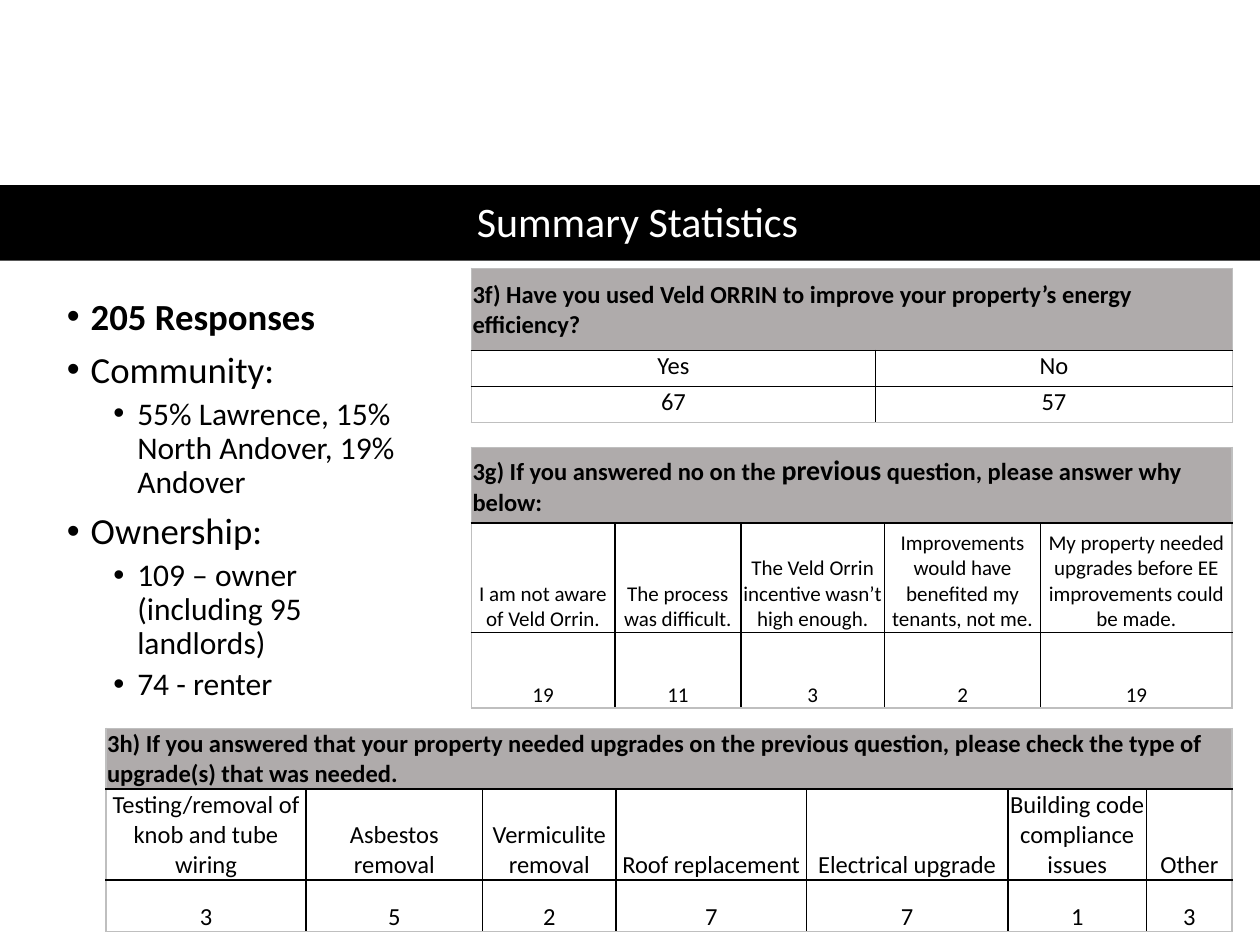
from lxml import etree
from pptx import Presentation
from pptx import util as u
from pptx.dml.color import RGBColor
from pptx.enum import shapes, text
from pptx.oxml.ns import qn

FONT = "Calibri"
BLACK, WHITE, GREY, EDGE = "000000", "FFFFFF", "AFABAB", "BFBFBF"
LEFT, MID, RIGHT = text.PP_ALIGN.LEFT, text.PP_ALIGN.CENTER, 9.78
TOP, BASE = text.MSO_ANCHOR.MIDDLE, text.MSO_ANCHOR.BOTTOM

POINTS = [
    (0, "205 Responses", True),
    (0, "Community:", False),
    (1, "55% Lawrence, 15% North Andover, 19% Andover", False),
    (0, "Ownership:", False),
    (1, "109 – owner (including 95 landlords)", False),
    (1, "74 - renter", False),
]
USED = [("Yes", "67"), ("No", "57")]
WHY = [
    ("I am not aware of Veld Orrin.", "19"),
    ("The process was difficult.", "11"),
    ("The Veld Orrin incentive wasn’t high enough.", "3"),
    ("Improvements would have benefited my tenants, not me.", "2"),
    ("My property needed upgrades before EE improvements could be made.", "19"),
]
NEEDS = [
    ("Testing/removal of knob and tube wiring", "3"),
    ("Asbestos removal", "5"),
    ("Vermiculite removal", "2"),
    ("Roof replacement", "7"),
    ("Electrical upgrade", "7"),
    ("Building code compliance issues", "1"),
    ("Other", "3"),
]


def tint(code):
    return RGBColor.from_string(code)


def style(run, size, color=BLACK, bold=False):
    font = run.font
    font.name, font.size, font.bold = FONT, u.Pt(size), bold
    font.color.rgb = tint(color)


def place(shape, x, y, w, h):
    shape.left, shape.top = u.Inches(x), u.Inches(y)
    shape.width, shape.height = u.Inches(w), u.Inches(h)


def inset(item, sides):
    """Set left, top, right and bottom margins in inches."""
    names = ("margin_left", "margin_top", "margin_right", "margin_bottom")
    for name, side in zip(names, sides):
        setattr(item, name, u.Inches(side))


def add_band(slide):
    band = slide.shapes.add_shape(
        shapes.MSO_SHAPE.RECTANGLE, 0, u.Inches(1.47), u.Inches(10), u.Inches(0.6))
    band.shadow.inherit = False
    band.fill.solid()
    band.fill.fore_color.rgb = tint(BLACK)
    band.line.fill.background()
    slide.shapes._spTree.insert(2, band._element)  # behind the title


def set_title(slide, words):
    title = slide.shapes.title
    place(title, 0.46, 1.47, 9.2, 0.61)
    frame = title.text_frame
    frame.text = words
    frame.auto_size = text.MSO_AUTO_SIZE.NONE
    frame.vertical_anchor = TOP
    inset(frame, (0.07, 0.04, 0.07, 0.04))
    para = frame.paragraphs[0]
    para.alignment, para.line_spacing = MID, 0.9
    style(para.runs[0], 24, WHITE)


def set_list(slide, points):
    body = slide.placeholders[1]
    place(body, 0.46, 2.33, 8.39, 4.96)
    frame = body.text_frame
    frame.text = "\n".join(words for _, words, _ in points)
    frame.auto_size = text.MSO_AUTO_SIZE.NONE
    inset(frame, (0.07, 0.04, 0.07, 0.04))
    frame._txBody.bodyPr.set("numCol", "3")
    for para, (level, _, bold) in zip(frame.paragraphs, points):
        para.level, para.line_spacing = level, 0.9
        para.space_before = u.Pt((7.5, 3.8)[level])
        props = para._p.get_or_add_pPr()
        props.set("marL", str(u.Inches((0.19, 0.56)[level])))
        props.set("indent", str(u.Inches(-0.19)))
        etree.SubElement(props, qn("a:buFont")).set("typeface", "Arial")
        etree.SubElement(props, qn("a:buChar")).set("char", "•")
        style(para.runs[0], (21, 18)[level], bold=bold)


def rule(cell, side, color):
    """Draw one border of a cell."""
    line = etree.SubElement(cell._tc.get_or_add_tcPr(), qn("a:ln" + side))
    line.set("w", str(u.Pt(1)))
    fill = etree.SubElement(line, qn("a:solidFill"))
    etree.SubElement(fill, qn("a:srgbClr")).set("val", color)


def border(grid, row, col):
    cell = grid.cell(row, col)
    last_row, last_col = len(grid.rows) - 1, len(grid.columns) - 1
    outer = {"L": col == 0, "R": col == last_col or cell.is_merge_origin,
             "T": row == 0, "B": row == last_row}
    for side, edge in outer.items():
        rule(cell, side, EDGE if edge else BLACK)


def fill_cell(cell, parts, align, anchor, low, bold=False):
    """Write (words, size) parts into a cell; low is its bottom margin."""
    para = cell.text_frame.paragraphs[0]
    para.alignment = align
    for words, size in parts:
        run = para.add_run()
        run.text = words
        style(run, size, bold=bold)
    cell.vertical_anchor = anchor
    inset(cell, (0.01, 0.01, 0.01, low))


def add_grid(slide, y, widths, heights, head, pairs, size=14, low=0):
    """Table with a full-width question above answers and their counts."""
    wide = sum(widths)
    frame = slide.shapes.add_table(
        len(heights), len(widths), u.Inches(RIGHT - wide), u.Inches(y),
        u.Inches(wide), u.Inches(sum(heights)))
    grid = frame.table
    grid.horz_banding = False
    for col, width in zip(grid.columns, widths):
        col.width = u.Inches(width)
    for row, height in zip(grid.rows, heights):
        row.height = u.Inches(height)
    grid.cell(0, 0).merge(grid.cell(0, len(widths) - 1))
    for r in range(len(heights)):
        for c in range(len(widths)):
            border(grid, r, c)
            cell = grid.cell(r, c)
            if r:
                cell.fill.background()
                fill_cell(cell, [(pairs[c][r - 1], size)], MID, BASE, low)
            else:
                cell.fill.solid()
                cell.fill.fore_color.rgb = tint(GREY)
    fill_cell(grid.cell(0, 0), head, LEFT, TOP, 0, bold=True)


def main():
    deck = Presentation()
    deck.slide_width, deck.slide_height = u.Inches(10), u.Inches(7.5)
    slide = deck.slides.add_slide(deck.slide_layouts[1])
    add_band(slide)
    set_title(slide, "Summary Statistics")
    set_list(slide, POINTS)
    add_grid(slide, 2.13, [3.21, 2.83], [0.65, 0.28, 0.28],
             [("3f) Have you used Veld ORRIN to improve your property’s "
               "energy efficiency?", 14)], USED, low=0.04)
    add_grid(slide, 3.55, [1.14, 1, 1.14, 1.24, 1.52], [0.6, 0.87, 0.6],
             [("3g) If you answered no on the ", 14), ("previous", 16),
              (" question, please answer why below:", 14)], WHY, size=12)
    add_grid(slide, 5.78, [1.59, 1.4, 1.06, 1.51, 1.6, 1.1, 0.68],
             [0.48, 0.71, 0.41],
             [("3h) If you answered that your property needed upgrades on the "
               "previous question, please check the type of upgrade(s) that "
               "was needed.", 14)], NEEDS)
    deck.save("out.pptx")


if __name__ == "__main__":
    main()
